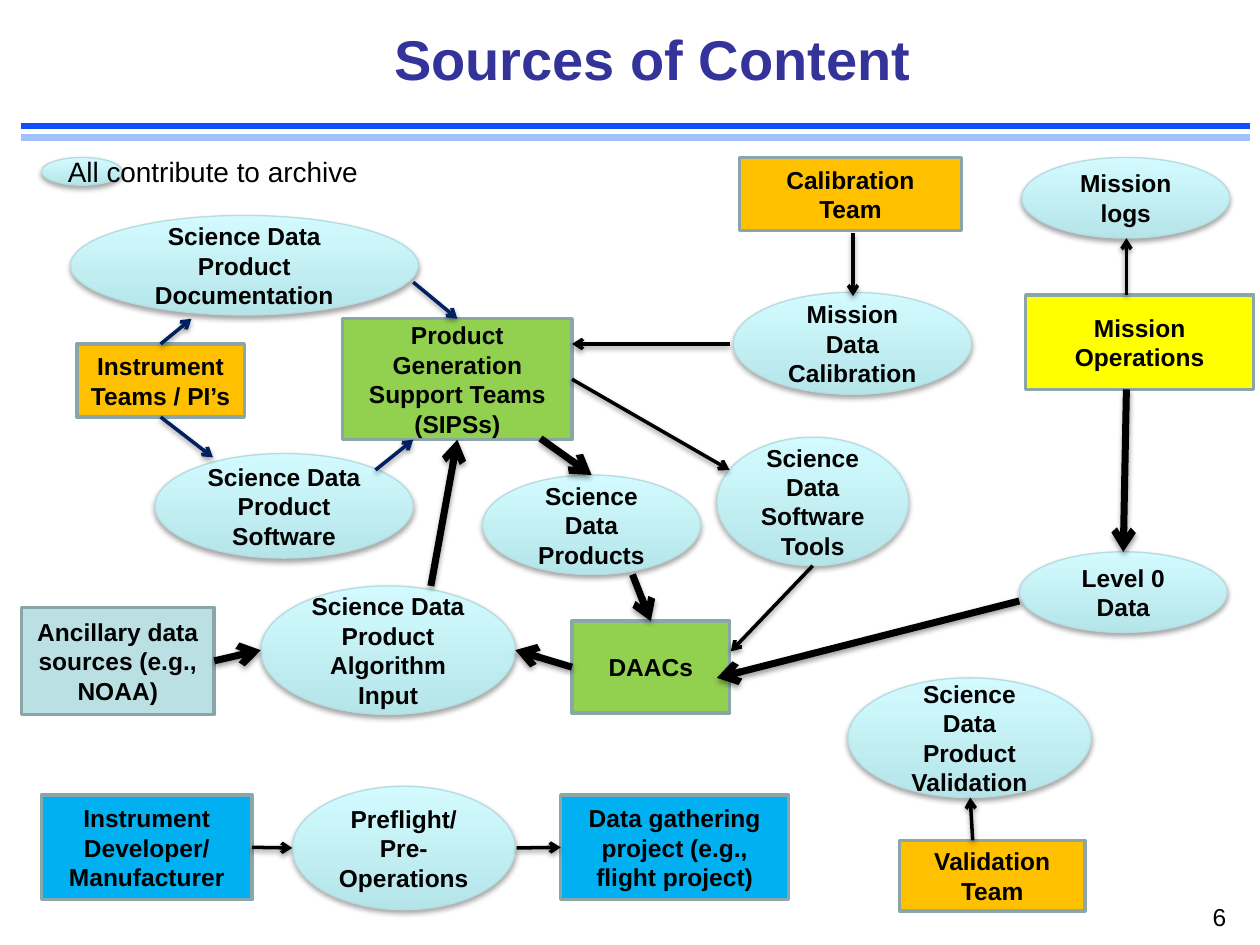
from lxml.etree import SubElement
from pptx import Presentation
from pptx.dml.color import RGBColor
from pptx.enum.shapes import MSO_CONNECTOR, MSO_SHAPE
from pptx.enum.text import MSO_ANCHOR, MSO_AUTO_SIZE, PP_ALIGN
from pptx.oxml.ns import qn
from pptx.util import Pt

PX = 9144  # 100 px to the inch
BLACK = RGBColor(0x00, 0x00, 0x00)
NAVY = RGBColor(0x00, 0x20, 0x60)
TITLE_BLUE = RGBColor(0x33, 0x33, 0x99)
RULE_BLUE = RGBColor(0x11, 0x4F, 0xFB)
RULE_PALE = RGBColor(0xA2, 0xC1, 0xFE)
ORANGE = RGBColor(0xFF, 0xC0, 0x00)
BLUE = RGBColor(0x00, 0xB0, 0xF0)
GREEN = RGBColor(0x92, 0xD0, 0x50)
YELLOW = RGBColor(0xFF, 0xFF, 0x00)
TEAL = RGBColor(0xBB, 0xE0, 0xE3)
BOX_EDGE = RGBColor(0x8A, 0xA6, 0xA8)
OVAL_EDGE = RGBColor(0xB6, 0xDC, 0xDF)
OVAL_DARK = RGBColor(0xB5, 0xE5, 0xE9)
OVAL_LIGHT = RGBColor(0xD3, 0xFB, 0xFF)
TOP, LEFT, BOTTOM, RIGHT = range(4)


def write(shape, text, size=14, color=BLACK, bold=False, align=PP_ALIGN.CENTER,
          anchor=MSO_ANCHOR.MIDDLE, wrap=True, spacing=None):
    frame = shape.text_frame
    frame.auto_size = MSO_AUTO_SIZE.NONE if wrap else MSO_AUTO_SIZE.SHAPE_TO_FIT_TEXT
    frame.word_wrap = wrap
    frame.vertical_anchor = anchor
    paragraph = frame.paragraphs[0]
    paragraph.alignment = align
    paragraph.line_spacing = spacing
    run = paragraph.add_run()
    run.text = text
    run.font.name = "Arial"
    run.font.size = Pt(size)
    run.font.bold = bold
    run.font.color.rgb = color


def set_shadow(shape, opacity=0, distance=0):
    """Replace the theme shadow by a soft one below, or by none at opacity 0."""
    effects = SubElement(shape._element.spPr, qn("a:effectLst"))
    if opacity:
        shadow = SubElement(effects, qn("a:outerShdw"), blurRad=str(Pt(3.1)),
                            dist=str(Pt(distance)), dir="5400000", rotWithShape="0")
        color = SubElement(shadow, qn("a:srgbClr"), val="000000")
        SubElement(color, qn("a:alpha"), val=str(opacity * 1000))


presentation = Presentation()
presentation.slide_width = 1000 * PX
presentation.slide_height = 750 * PX
slide = presentation.slides.add_slide(presentation.slide_layouts[5])
shapes = slide.shapes

for y, color in [(100, RULE_BLUE), (109, RULE_PALE)]:
    rule = shapes.add_connector(MSO_CONNECTOR.STRAIGHT, 17 * PX, y * PX, 992 * PX, y * PX)
    rule.line.color.rgb = color
    rule.line.width = Pt(4)
    set_shadow(rule)

title = shapes.title
title.left, title.top, title.width, title.height = (v * PX for v in (138, 4, 760, 93))
write(title, "Sources of Content", size=32, color=TITLE_BLUE, bold=True, spacing=0.85)

page_number = shapes.add_textbox(775 * PX, 711 * PX, 208 * PX, 39 * PX)
write(page_number, "6", align=PP_ALIGN.RIGHT, anchor=MSO_ANCHOR.TOP)

nodes = {}
boxes = [
    ("Instrument Teams / PI’s", ORANGE, 61, 273, 133, 58),
    ("Instrument Developer/ Manufacturer", BLUE, 33, 631, 167, 83),
    ("Data gathering project (e.g., flight project)", BLUE, 445, 631, 181, 83),
    ("Product Generation Support Teams (SIPSs)", GREEN, 272, 253, 182, 96),
    ("DAACs", GREEN, 454, 493, 125, 73),
    ("Calibration Team", ORANGE, 587, 125, 176, 58),
    ("Mission Operations", YELLOW, 814, 234, 181, 75),
    ("Validation Team", ORANGE, 714, 667, 147, 56),
    ("Ancillary data sources (e.g., NOAA)", TEAL, 17, 482, 153, 85),
]
for text, color, *bounds in boxes:
    box = shapes.add_shape(MSO_SHAPE.RECTANGLE, *(v * PX for v in bounds))
    box.fill.solid()
    box.fill.fore_color.rgb = color
    box.line.color.rgb = BOX_EDGE
    box.line.width = Pt(2)
    box.shadow.inherit = False
    write(box, text, bold=True)
    nodes[text] = box

ovals = [
    ("Preflight/ Pre-Operations", 232, 624, 177, 98),
    ("Science Data Products", 383, 377, 173, 79),
    ("Science Data Product Documentation", 56, 171, 276, 79),
    ("Mission Data Calibration", 582, 232, 189, 81),
    ("Science Data Product Software", 123, 360, 205, 83),
    ("Science Data Product Algorithm Input", 207, 465, 202, 102),
    ("Science Data Product Validation", 673, 538, 193, 95),
    ("Science Data Software Tools", 569, 347, 152, 102),
    ("Level 0 Data", 809, 438, 165, 64),
    ("Mission logs", 811, 125, 165, 64),
    ("", 33, 125, 64, 22),  # legend marker
]
for text, *bounds in ovals:
    oval = shapes.add_shape(MSO_SHAPE.OVAL, *(v * PX for v in bounds))
    oval.fill.gradient()
    oval.fill.gradient_angle = 90
    for stop, color in zip(oval.fill.gradient_stops, (OVAL_DARK, OVAL_LIGHT)):
        stop.color.rgb = color
    oval.line.color.rgb = OVAL_EDGE
    oval.line.width = Pt(0.75)
    set_shadow(oval, opacity=35, distance=1.8)
    if text:
        write(oval, text, bold=True)
    nodes[text] = oval

teams = nodes["Instrument Teams / PI’s"]
sipss = nodes["Product Generation Support Teams (SIPSs)"]
daacs = nodes["DAACs"]
developer = nodes["Instrument Developer/ Manufacturer"]
project = nodes["Data gathering project (e.g., flight project)"]
ancillary = nodes["Ancillary data sources (e.g., NOAA)"]
products = nodes["Science Data Products"]
level_0 = nodes["Level 0 Data"]

# Points, colour, width, then the joined shape and side at each end
arrows = [
    (677, 185, 677, 235, BLACK, 2, None, None),
    (127, 332, 169, 363, NAVY, 2, (teams, BOTTOM), None),
    (298, 373, 328, 349, NAVY, 2, None, None),
    (127, 273, 152, 253, NAVY, 2, (teams, TOP), None),
    (328, 224, 363, 253, NAVY, 2, None, (sipss, TOP)),
    (894, 234, 894, 189, BLACK, 2, None, None),
    (772, 667, 770, 633, BLACK, 2, None, None),
    (200, 672, 232, 673, BLACK, 2, (developer, RIGHT), None),
    (410, 673, 445, 673, BLACK, 2, None, (project, LEFT)),
    (579, 273, 454, 273, BLACK, 2, None, None),
    (429, 348, 470, 377, BLACK, 4, None, (products, TOP)),
    (502, 456, 516, 493, BLACK, 4, None, (daacs, TOP)),
    (169, 524, 207, 516, BLACK, 4, (ancillary, RIGHT), None),
    (454, 529, 409, 516, BLACK, 4, (daacs, LEFT), None),
    (342, 465, 363, 349, BLACK, 4, None, (sipss, BOTTOM)),
    (454, 301, 579, 373, BLACK, 2, (sipss, RIGHT), None),
    (645, 449, 580, 517, BLACK, 2, None, None),
    (894, 309, 892, 438, BLACK, 4, None, (level_0, TOP)),
    (809, 477, 569, 538, BLACK, 4, None, None),
]
for *points, color, width, start, end in arrows:
    arrow = shapes.add_connector(MSO_CONNECTOR.STRAIGHT, *(v * PX for v in points))
    if start:
        arrow.begin_connect(*start)
    if end:
        arrow.end_connect(*end)
    arrow.line.color.rgb = color
    arrow.line.width = Pt(width)
    SubElement(arrow._element.spPr.find(qn("a:ln")), qn("a:tailEnd"), type="arrow")
    set_shadow(arrow, opacity=38, distance=1.6)

legend = shapes.add_textbox(44 * PX, 118 * PX, 253 * PX, 37 * PX)
write(legend, "All contribute to archive", size=16, align=PP_ALIGN.LEFT,
      anchor=MSO_ANCHOR.TOP, wrap=False)

presentation.save("out.pptx")
